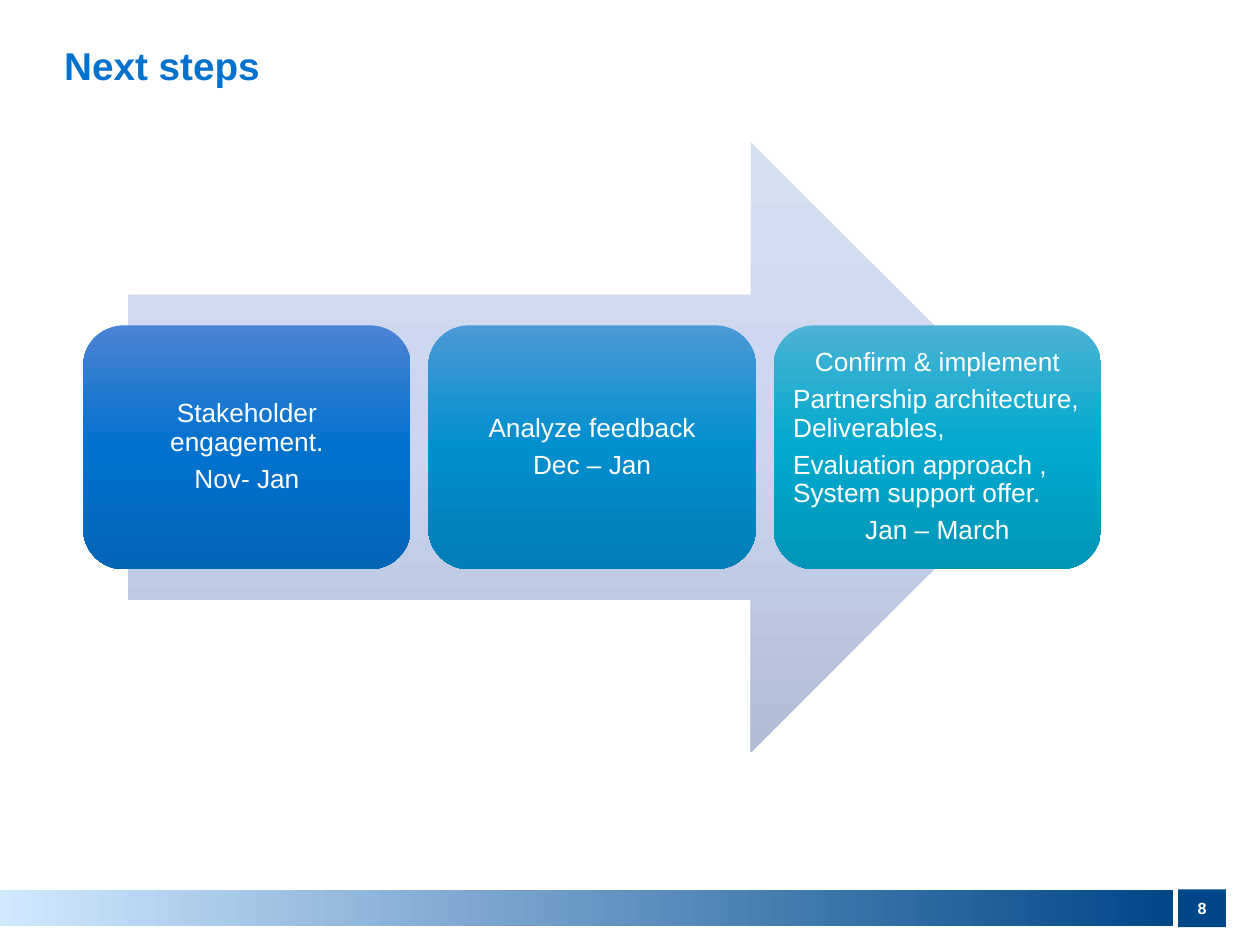
from pptx import Presentation
from pptx import util as u
from pptx.dml.color import RGBColor
from pptx.enum import shapes, text
from pptx.oxml import parse_xml
from pptx.oxml.ns import nsdecls, qn

FONT = "Arial"
WHITE, BLUE, NAVY = "FFFFFF", "0072CE", "00478A"
LEFT, CENTER = text.PP_ALIGN.LEFT, text.PP_ALIGN.CENTER

# Each step: gradient colours, then (paragraph, alignment) pairs
STEPS = [
    (("4B83D5", BLUE, "0065B7"),
     [("Stakeholder engagement.", CENTER), ("Nov- Jan", CENTER)]),
    (("4B9AD5", "008ECE", "007EB7"),
     [("Analyze feedback", CENTER), ("Dec – Jan", CENTER)]),
    (("4BB3D5", "00A9CE", "0096B7"),
     [("Confirm & implement", CENTER),
      ("Partnership architecture, Deliverables,", LEFT),
      ("Evaluation approach , System support offer.", LEFT),
      ("Jan – March", CENTER)]),
]


def color(value):
    return RGBColor.from_string(value)


def style(para, size, value, bold=False):
    para.font.name = FONT
    para.font.size = u.Pt(size)
    para.font.bold = bold
    para.font.color.rgb = color(value)


def set_gradient(shape, colors, angle):
    """Spread the colours evenly; the angle is clockwise in degrees."""
    shape.fill.gradient()
    gradient = shape._element.spPr.find(qn("a:gradFill"))
    last = len(colors) - 1
    stops = "".join(
        f'<a:gs pos="{100000 * i // last}"><a:srgbClr val="{value}"/></a:gs>'
        for i, value in enumerate(colors))
    gradient.replace(gradient.find(qn("a:gsLst")), parse_xml(
        f'<a:gsLst {nsdecls("a")}>{stops}</a:gsLst>'))
    gradient.find(qn("a:lin")).set("ang", str(angle * 60000))


def add_shape(page, kind, left, top, width, height, colors, angle=90):
    shape = page.shapes.add_shape(kind, *map(u.Inches, (left, top, width, height)))
    shape.shadow.inherit = False
    shape.line.fill.background()
    if len(colors) > 1:
        set_gradient(shape, colors, angle)
    else:
        shape.fill.solid()
        shape.fill.fore_color.rgb = color(colors[0])
    return shape


def set_margins(frame, horizontal, vertical):
    frame.margin_left = frame.margin_right = u.Inches(horizontal)
    frame.margin_top = frame.margin_bottom = u.Inches(vertical)


def place_title(page, left, top, width, height):
    title = page.shapes.title
    title.left, title.top, title.width, title.height = map(
        u.Inches, (left, top, width, height))
    frame = title.text_frame
    frame.text = "Next steps"
    frame.vertical_anchor = text.MSO_ANCHOR.TOP
    set_margins(frame, 0.1, 0.05)
    para = frame.paragraphs[0]
    para.alignment = LEFT
    para.line_spacing = 0.9
    style(para, 22.1, BLUE, bold=True)


def add_step(page, left, top, width, height, colors, lines):
    box = add_shape(page, shapes.MSO_SHAPE.ROUNDED_RECTANGLE,
                    left, top, width, height, colors)
    frame = box.text_frame
    frame.word_wrap = True
    frame.vertical_anchor = text.MSO_ANCHOR.MIDDLE
    set_margins(frame, 0.06, 0.06)
    for i, (line, alignment) in enumerate(lines):
        para = frame.add_paragraph() if i else frame.paragraphs[0]
        para.text = line
        para.alignment = alignment
        para.line_spacing = 0.9
        para.space_after = u.Pt(5)
        style(para, 15, WHITE)


def add_process(page, left, top, width, height):
    # Background arrow, inset at both ends
    inset = 0.36
    add_shape(page, shapes.MSO_SHAPE.RIGHT_ARROW, left + inset, top,
              width - 2 * inset, height, ("D5DDF1", "CBD5EF", "B1BCD7"))
    # Steps, evenly spaced across the middle
    gap, step_height = 0.14, 0.4 * height
    step_width = (width - gap * (len(STEPS) - 1)) / len(STEPS)
    for i, (colors, lines) in enumerate(STEPS):
        add_step(page, left + i * (step_width + gap),
                 top + (height - step_height) / 2,
                 step_width, step_height, colors, lines)


def add_footer(page, left, top, width, height):
    number_width, gap = 0.38, 0.04
    bar_width = width - number_width - gap
    # Gradient bar
    add_shape(page, shapes.MSO_SHAPE.RECTANGLE, left, top, bar_width,
              height - 0.01, ("D1E8FF", NAVY), angle=0)
    # Page number
    box = add_shape(page, shapes.MSO_SHAPE.RECTANGLE, left + bar_width + gap,
                    top, number_width, height, (NAVY,))
    frame = box.text_frame
    frame.vertical_anchor = text.MSO_ANCHOR.MIDDLE
    set_margins(frame, 0, 0)
    para = frame.paragraphs[0]
    para.text = "8"
    para.alignment = CENTER
    style(para, 9.2, WHITE, bold=True)


def main():
    deck = Presentation()
    deck.slide_width, deck.slide_height = u.Inches(10), u.Inches(7.5)
    page = deck.slides.add_slide(deck.slide_layouts.get_by_name("Title Only"))
    add_footer(page, 0, 7.06, 9.73, 0.3)
    place_title(page, 0.41, 0.32, 8.21, 0.82)
    add_process(page, 0.66, 1.13, 8.08, 4.84)
    deck.save("out.pptx")


if __name__ == "__main__":
    main()
